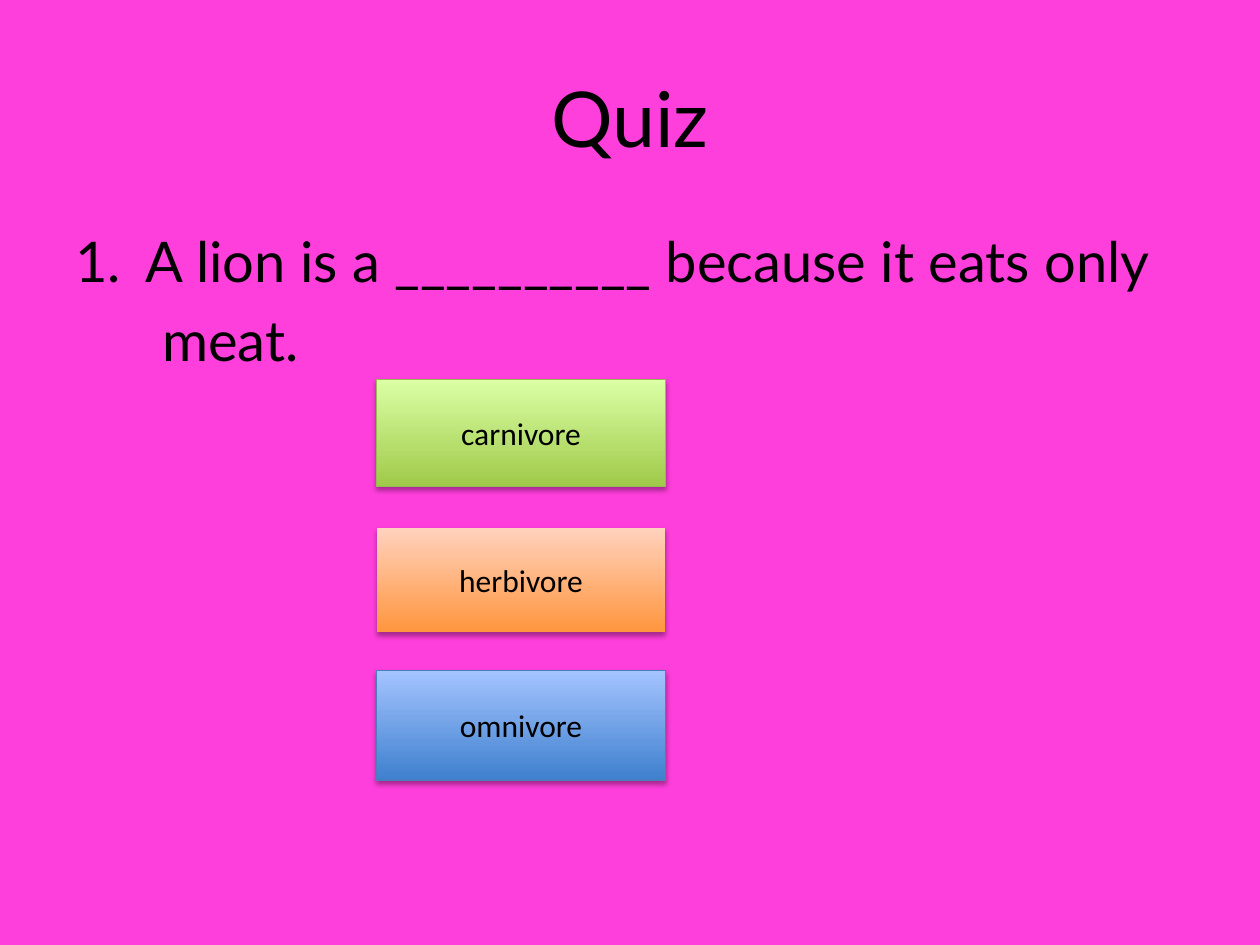
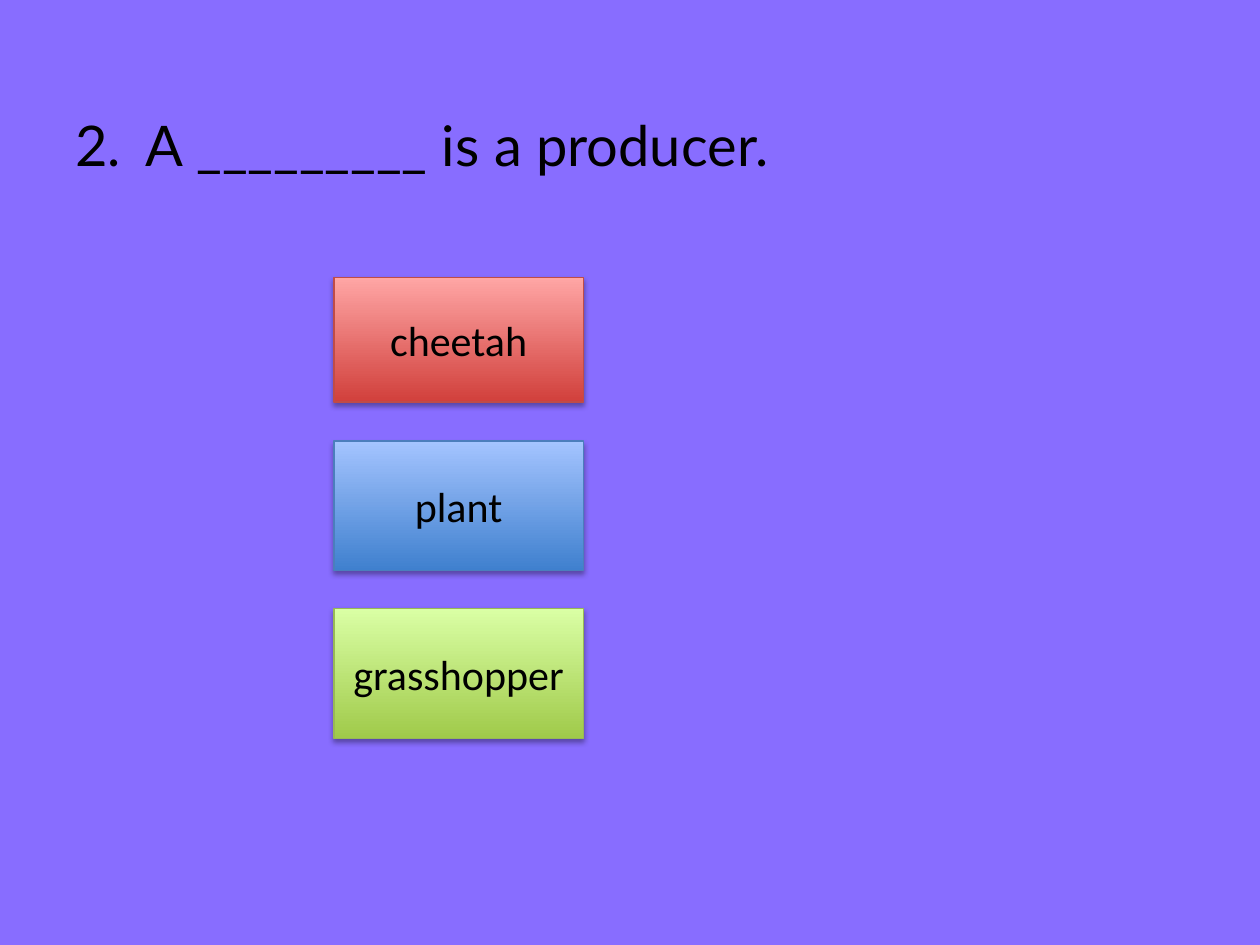
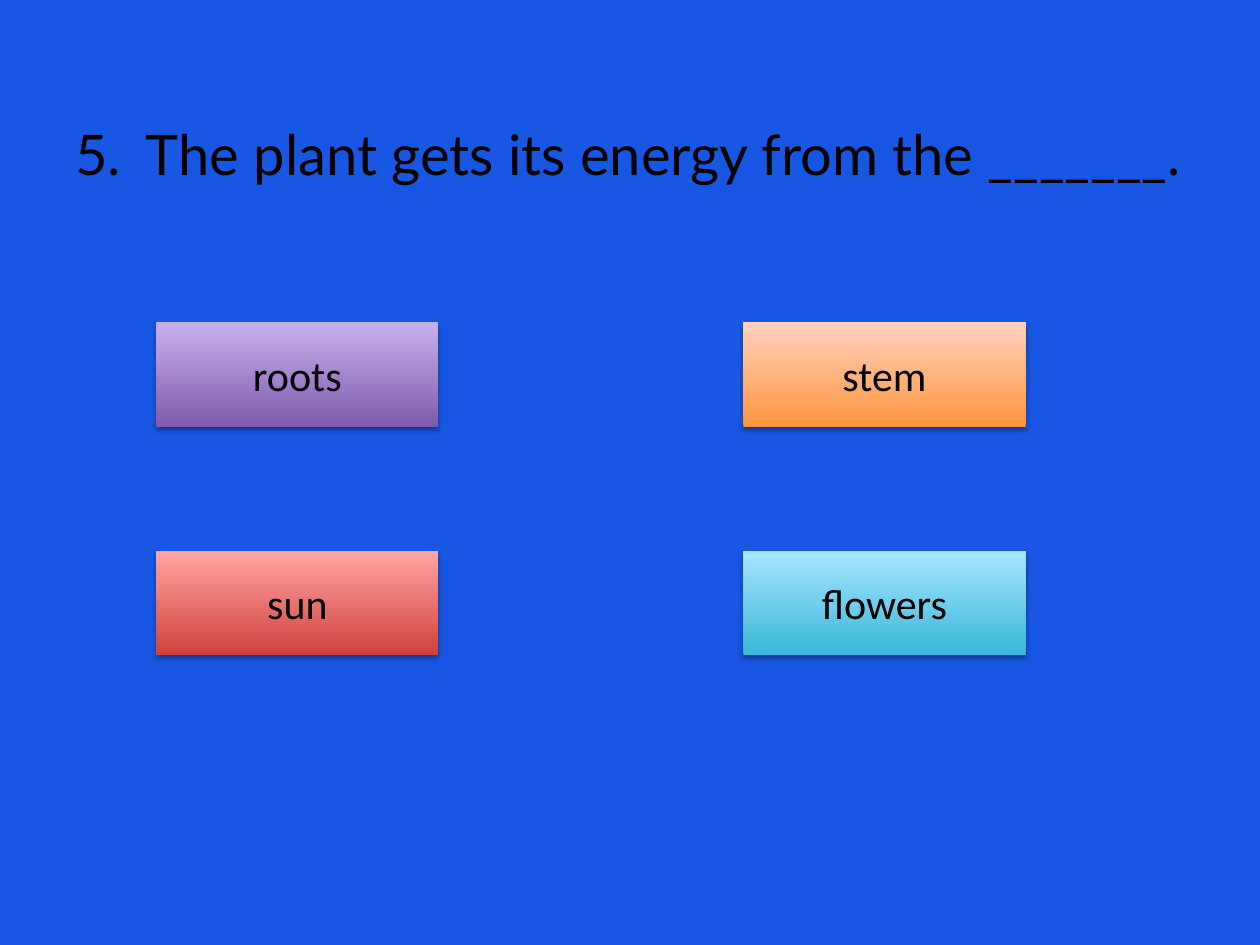
from lxml import etree
from pptx import Presentation
from pptx.dml.color import RGBColor
from pptx.enum.shapes import MSO_SHAPE
from pptx.enum.text import MSO_ANCHOR, PP_ALIGN
from pptx.oxml import parse_xml
from pptx.oxml.ns import nsdecls, qn
from pptx.util import Inches, Pt

BUTTON = MSO_SHAPE.ACTION_BUTTON_CUSTOM
MIDDLE = MSO_ANCHOR.MIDDLE
CENTER = PP_ALIGN.CENTER

COLORS = {"text": "000000", "pink": "FF3FDC", "violet": "886DFF", "royal": "1857E4"}
# Button gradients, bottom to top
GRADIENTS = {
    "green": ("A0CA4A", "DAFFA5"),
    "orange": ("FF953E", "FFD2BD"),
    "blue": ("3F80CE", "A4C4FF"),
    "red": ("D1403C", "FFA6A5"),
    "purple": ("7F5BAB", "C8B0ED"),
    "aqua": ("39B7D8", "A7E6FF"),
}
OUTLINES = {"green": "98B955", "blue": "4B7EBC", "red": "BF4C48"}
SHADOW = (
    f'<a:outerShdw {nsdecls("a")} blurRad="{Pt(3.1)}" dist="{Pt(1.8)}" dir="5400000" '
    'rotWithShape="0"><a:srgbClr val="000000"><a:alpha val="35000"/></a:srgbClr></a:outerShdw>'
)

TITLE_FONT = {"name": "Lato", "size": Pt(44)}
QUESTION_FONT = {"name": "Lato", "size": Pt(32)}
MARGIN, TEXT_WIDTH, BODY_BOTTOM = 0.5, 9, 6.7
NUMBER_INDENT, CONTINUATION_INDENT = 0.56, 0.69

# Each answer: text, gradient, left, top, height
QUIZ = [
    {"bg": "pink", "title": "Quiz", "number": 1, "top": 1.75,
     "lines": ["A lion is a __________ because it eats only", "meat."],
     "width": 2.29, "size": 18, "outlined": True,
     "answers": [("carnivore", "green", 2.99, 3.01, 0.85),
                 ("herbivore", "orange", 2.99, 4.19, 0.83),
                 ("omnivore", "blue", 2.99, 5.32, 0.87)]},
    {"bg": "violet", "number": 2, "top": 0.83,
     "lines": ["A _________ is a producer."],
     "width": 1.98, "size": 24, "outlined": True,
     "answers": [("cheetah", "red", 2.65, 2.2, 0.99),
                 ("plant", "blue", 2.65, 3.5, 1.03),
                 ("grasshopper", "green", 2.65, 4.83, 1.03)]},
    {"bg": "royal", "number": 5, "top": 0.9,
     "lines": ["The plant gets its energy from the _______."],
     "width": 2.24, "size": 24, "outlined": False,
     "answers": [("roots", "purple", 1.24, 2.56, 0.83),
                 ("stem", "orange", 5.9, 2.56, 0.83),
                 ("sun", "red", 1.24, 4.37, 0.83),
                 ("flowers", "aqua", 5.9, 4.37, 0.83)]},
]


def write(p, text, font):
    r = p.add_run()
    r.text = text
    r.font.color.rgb = RGBColor.from_string(COLORS["text"])
    for name, value in font.items():
        setattr(r.font, name, value)


def add_text_box(s, top, height):
    sp = s.shapes.add_textbox(Inches(MARGIN), Inches(top), Inches(TEXT_WIDTH), Inches(height))
    sp.text_frame.word_wrap = True
    return sp.text_frame


prs = Presentation()
prs.slide_width, prs.slide_height = Inches(10), Inches(7.5)

for quiz in QUIZ:
    s = prs.slides.add_slide(prs.slide_layouts[6])
    s.background.fill.solid()
    s.background.fill.fore_color.rgb = RGBColor.from_string(COLORS[quiz["bg"]])

    if "title" in quiz:
        tf = add_text_box(s, 0.3, 1.25)
        tf.vertical_anchor = MIDDLE
        tf.paragraphs[0].alignment = CENTER
        write(tf.paragraphs[0], quiz["title"], TITLE_FONT)

    tf = add_text_box(s, quiz["top"], BODY_BOTTOM - quiz["top"])
    for i, line in enumerate(quiz["lines"]):
        p = tf.add_paragraph() if i else tf.paragraphs[0]
        pPr = p._p.get_or_add_pPr()
        if i:
            p.space_before = Pt(6.4)
            pPr.set("marL", str(Inches(CONTINUATION_INDENT)))
        else:
            pPr.set("marL", str(Inches(NUMBER_INDENT)))
            pPr.set("indent", str(-Inches(NUMBER_INDENT)))
            etree.SubElement(pPr, qn("a:buAutoNum"), type="arabicPeriod",
                             startAt=str(quiz["number"]))
        write(p, line, QUESTION_FONT)

    for text, color, left, top, height in quiz["answers"]:
        sp = s.shapes.add_shape(BUTTON, Inches(left), Inches(top),
                                Inches(quiz["width"]), Inches(height))
        sp.fill.gradient()
        sp.fill.gradient_angle = 90
        for stop, value in zip(sp.fill.gradient_stops, GRADIENTS[color]):
            stop.color.rgb = RGBColor.from_string(value)
        if quiz["outlined"] and color in OUTLINES:
            sp.line.color.rgb = RGBColor.from_string(OUTLINES[color])
            sp.line.width = Pt(0.75)
        else:
            sp.line.fill.background()
        sp.shadow.inherit = False
        sp._element.spPr.find(qn("a:effectLst")).append(parse_xml(SHADOW))
        tf = sp.text_frame
        tf.word_wrap = True
        tf.vertical_anchor = MIDDLE
        tf.paragraphs[0].alignment = CENTER
        write(tf.paragraphs[0], text, {"name": "Calibri", "size": Pt(quiz["size"])})

prs.save("out.pptx")
